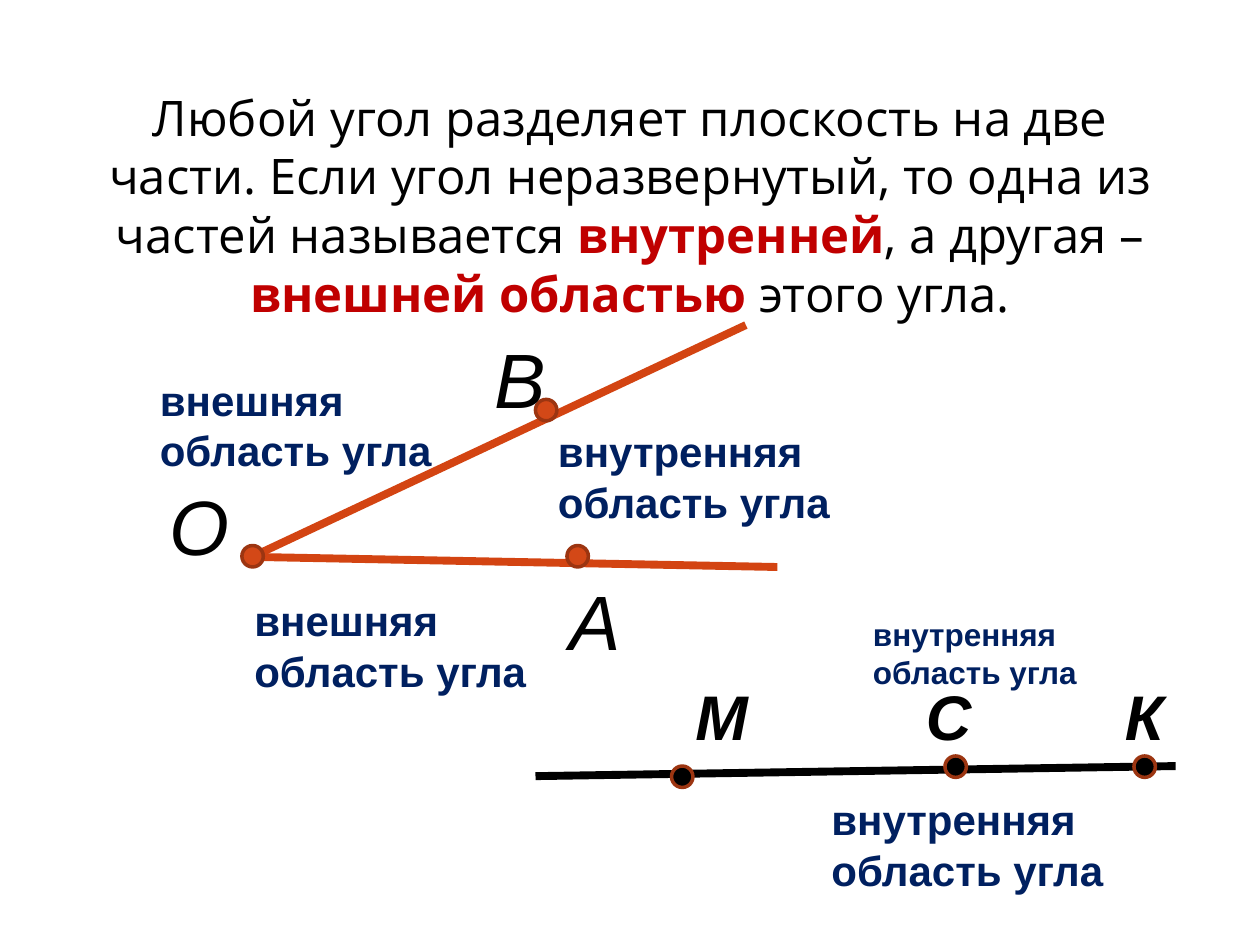
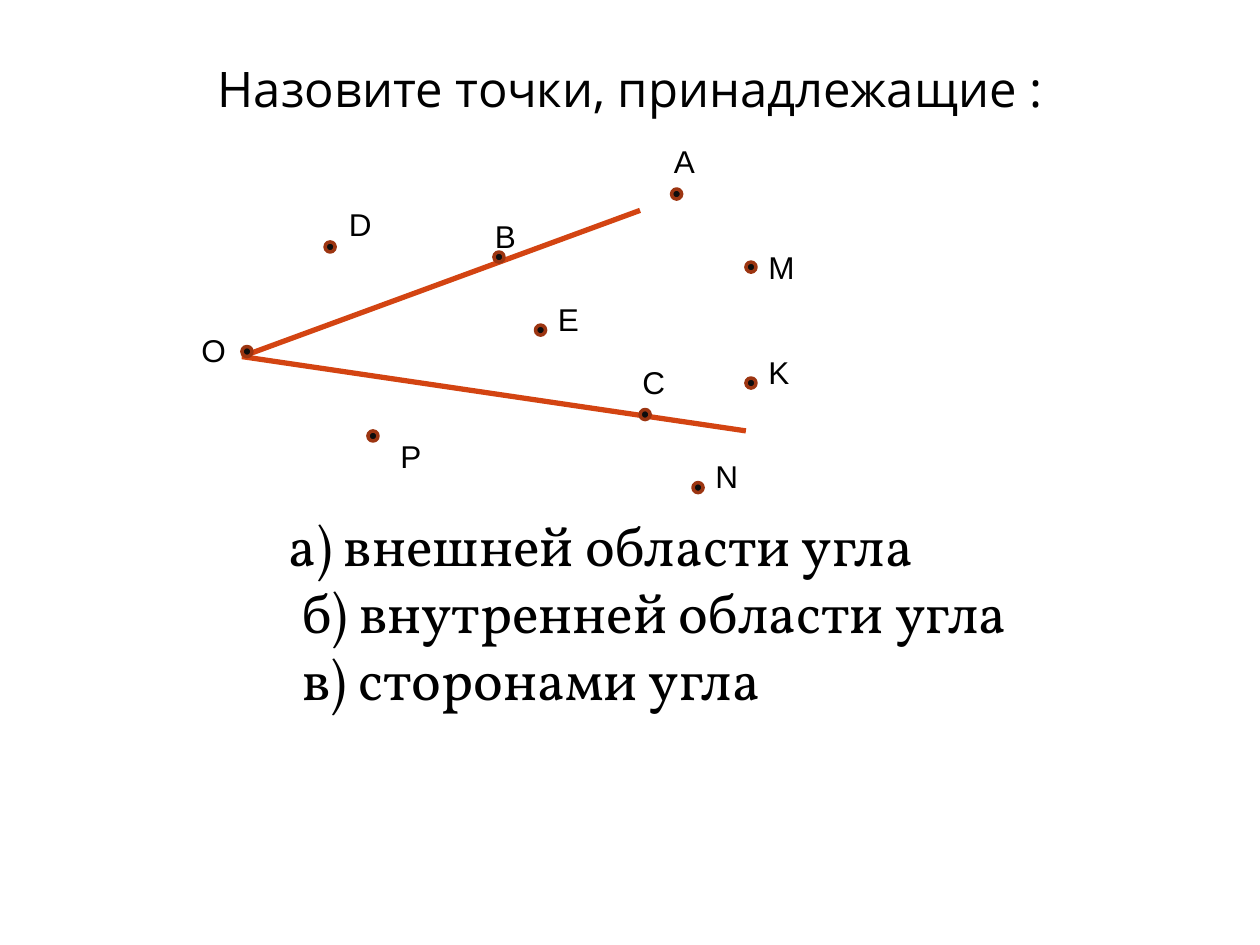
from dataclasses import dataclass

import pptx
import pptx.dml.color
import pptx.enum.shapes
import pptx.enum.text
import pptx.util
from lxml import etree
from pptx.util import Inches

ALIGN = pptx.enum.text.PP_ALIGN
ANCHOR = pptx.enum.text.MSO_ANCHOR


@dataclass(frozen=True)
class Theme:
    black: str = "000000"
    ink: str = "0D0D0D"
    accent: str = "C00000"
    navy: str = "002060"
    ray: str = "D34412"
    dot: str = "D34817"
    dot_edge: str = "9C3511"
    title_font: str = "Open Sans"
    body_font: str = "Vollkorn"
    label_font: str = "Arial"
    title_size: int = 28
    body_size: int = 32
    vertex_size: int = 44
    line_point_size: int = 36
    region_size: int = 24
    small_size: int = 18
    thick: float = 4.5
    thin: float = 3
    edge: float = 2


def rgb(value):
    return pptx.dml.color.RGBColor.from_string(value)


class Deck:
    def __init__(self, theme):
        self.theme = theme
        self.prs = pptx.Presentation()
        self.prs.slide_width, self.prs.slide_height = Inches(10), Inches(7.5)
        self.s = None

    def new_slide(self):
        self.s = self.prs.slides.add_slide(self.prs.slide_layouts[6])

    def text(self, text, x, y, w, h, *, size, font, color="000000", bold=False,
             italic=False, align=ALIGN.LEFT, anchor=ANCHOR.TOP, wrap=True, indents=None):
        """Add a text box: newlines split paragraphs, *stars* mark accented words."""
        tf = self.s.shapes.add_textbox(Inches(x), Inches(y), Inches(w), Inches(h)).text_frame
        tf.word_wrap = wrap
        tf.vertical_anchor = anchor
        for i, line in enumerate(text.split("\n")):
            p = tf.add_paragraph() if i else tf.paragraphs[0]
            p.alignment = align
            if indents:
                p._p.get_or_add_pPr().set("marL", str(Inches(indents[i])))
            for j, part in enumerate(line.split("*")):
                if not part:
                    continue
                marked = j % 2 == 1
                r = p.add_run()
                r.text = part
                r.font.name, r.font.size = font, pptx.util.Pt(size)
                r.font.bold, r.font.italic = bold or marked, italic
                r.font.color.rgb = rgb(self.theme.accent if marked else color)

    def title(self, text, y, h):
        self.text(text, 0.5, y, 9, h, size=self.theme.title_size, font=self.theme.title_font,
                  align=ALIGN.CENTER, anchor=ANCHOR.MIDDLE)

    def label(self, text, x, y, w, size, **style):
        """Add an unwrapped label whose height follows from its lines."""
        h = (text.count("\n") + 1) * size * 1.15 / 72 + 0.1
        self.text(text, x, y, w, h, size=size, font=self.theme.label_font, wrap=False, **style)

    def region(self, side, x, y, w=2.38, size=None):
        self.label(f"{side}\nобласть угла", x, y, w, size or self.theme.region_size,
                   color=self.theme.navy, bold=True)

    def line(self, start, end, color, width):
        c = self.s.shapes.add_connector(pptx.enum.shapes.MSO_CONNECTOR.STRAIGHT,
                                        *map(Inches, (*start, *end)))
        c.line.color.rgb = rgb(color)
        c.line.width = pptx.util.Pt(width)
        etree.SubElement(c._element.spPr, pptx.oxml.ns.qn("a:effectLst"))

    def point(self, x, y, size, fill):
        sp = self.s.shapes.add_shape(pptx.enum.shapes.MSO_SHAPE.OVAL,
                                     *map(Inches, (x, y, size, size)))
        sp.shadow.inherit = False
        sp.fill.solid()
        sp.fill.fore_color.rgb = rgb(fill)
        sp.line.color.rgb = rgb(self.theme.dot_edge)
        sp.line.width = pptx.util.Pt(self.theme.edge)


def angle_regions(deck):
    t = deck.theme
    deck.new_slide()
    deck.title("Любой угол разделяет плоскость на две части. Если угол неразвернутый, "
               "то одна из частей называется *внутренней*, а другая – "
               "*внешней областью* этого угла.", 1, 1.25)

    for end in ((5.92, 2.58), (6.17, 4.5)):
        deck.line((2, 4.42), end, t.ray, t.thick)
    for x, y in ((4.25, 3.17), (4.5, 4.33), (1.92, 4.33)):
        deck.point(x, y, 0.17, t.dot)
    for name, x, y, w in (("О", 1.25, 3.75, 0.68), ("А", 4.42, 4.5, 0.61),
                          ("В", 3.83, 2.58, 0.61)):
        deck.label(name, x, y, w, t.vertex_size, italic=True)
    deck.region("внутренняя", 4.33, 3.33)
    deck.region("внешняя", 1.17, 2.92)
    deck.region("внешняя", 1.92, 4.67)

    deck.line((4.25, 6.16), (9.33, 6.08), t.black, t.thick)
    for x, y in ((5.33, 6.08), (7.5, 6), (9, 6)):
        deck.point(x, y, 0.17, t.black)
    for name, x, w in (("С", 7.25, 0.57), ("М", 5.42, 0.62), ("К", 8.83, 0.51)):
        deck.label(name, x, 5.33, w, t.line_point_size, bold=True, italic=True)
    deck.region("внутренняя", 6.83, 4.83, 1.84, t.small_size)
    deck.region("внутренняя", 6.5, 6.25)


def name_the_points(deck):
    t = deck.theme
    deck.new_slide()
    deck.title("Назовите точки, принадлежащие :", 0.3, 0.8)
    deck.text("а) внешней области угла\nб) внутренней области угла\nв) сторонами угла",
              1.92, 4, 6.58, 2.5, size=t.body_size, font=t.body_font,
              indents=(0.27, 0.38, 0.38))

    for end in ((5.08, 1.67), (5.92, 3.42)):
        deck.line((1.92, 2.83), end, t.ray, t.thin)
    # name, point x and y, label x, y and width
    points = (
        ("O", 1.92, 2.75, 1.5, 2.58, 0.4),
        ("B", 3.92, 2, 3.83, 1.67, 0.37),
        ("C", 5.08, 3.25, 5, 2.83, 0.38),
        ("E", 4.25, 2.58, 4.33, 2.33, 0.37),
        ("M", 5.92, 2.08, 6, 1.92, 0.41),
        ("K", 5.92, 3, 6, 2.75, 0.37),
        ("N", 5.5, 3.83, 5.58, 3.58, 0.38),
        ("P", 2.92, 3.42, 3.08, 3.42, 0.37),
        ("D", 2.58, 1.92, 2.67, 1.58, 0.38),
        ("A", 5.33, 1.5, 5.25, 1.08, 0.37),
    )
    for name, x, y, label_x, label_y, w in points:
        deck.point(x, y, 0.08, t.ink)
        deck.label(name, label_x, label_y, w, t.small_size)


def main():
    deck = Deck(Theme())
    angle_regions(deck)
    name_the_points(deck)
    deck.prs.save("out.pptx")


if __name__ == "__main__":
    main()
